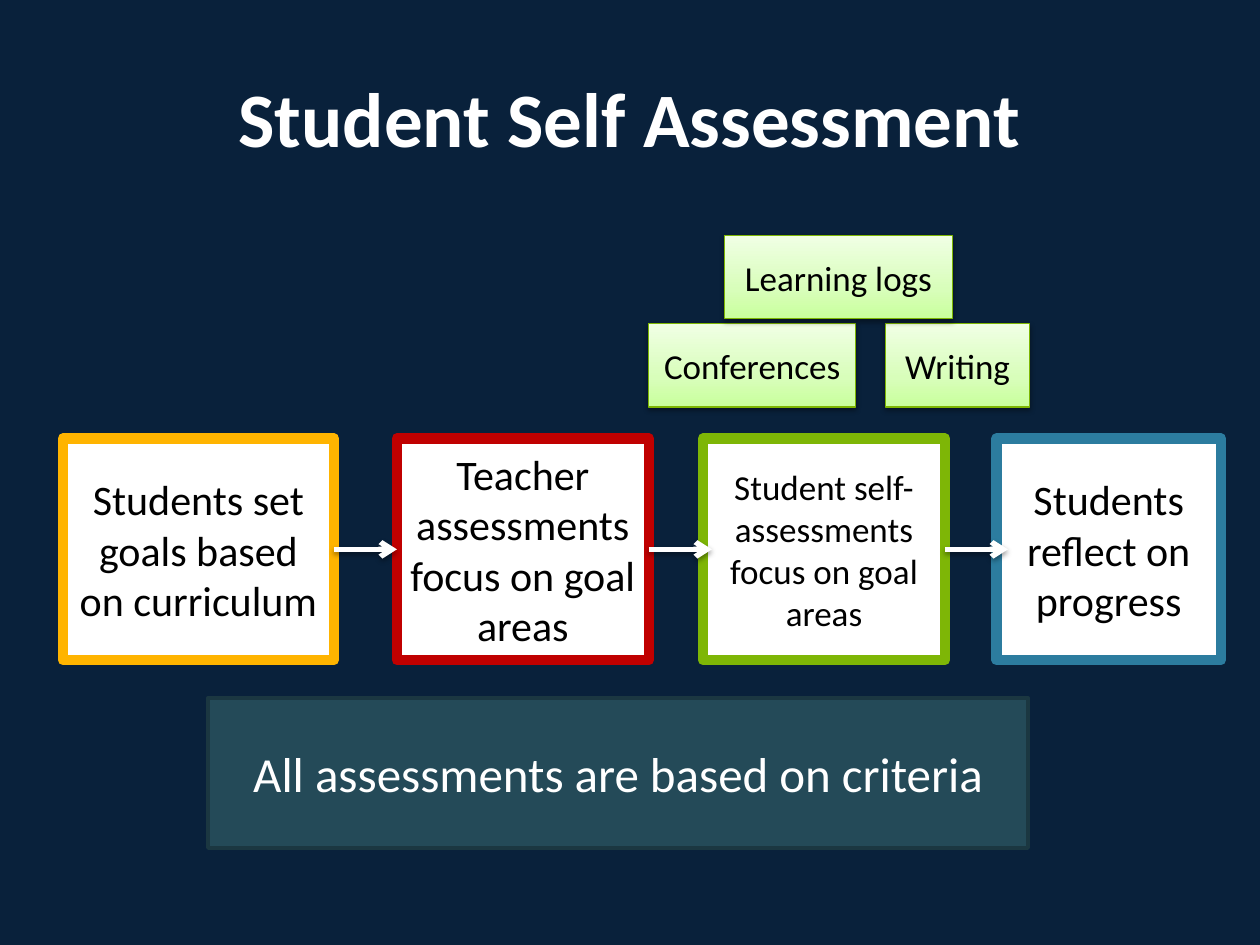
from dataclasses import dataclass

from pptx import Presentation
from pptx.dml.color import RGBColor
from pptx.enum.shapes import MSO_CONNECTOR, MSO_SHAPE
from pptx.enum.text import MSO_ANCHOR, PP_ALIGN
from pptx.oxml import parse_xml
from pptx.oxml.ns import nsdecls, qn
from pptx.util import Pt


@dataclass(frozen=True)
class Theme:
    """Colours, typeface and type sizes of the slide."""
    font: str = "Calibri"
    background: str = "09213B"
    light: str = "FFFFFF"
    dark: str = "000000"
    goals: str = "FFB400"
    teacher: str = "C00000"
    self_assessment: str = "7EB606"
    reflection: str = "2C7C9F"
    criteria: str = "244A58"
    criteria_edge: str = "1B3741"
    method_edge: str = "7DB602"
    method_stops: tuple = ((0, "C9FF9C"), (35, "D8FEBA"), (100, "F0FFE4"))
    title_size: int = 44
    criteria_size: int = 28
    step_size: int = 24
    small_size: int = 20


THEME = Theme()
BOTTOM_TO_TOP = 90
LEFT_SIDE, RIGHT_SIDE = 1, 3


def write_text(frame, wording, size, color, bold=False):
    """Put one centred paragraph into a text frame."""
    frame.text = wording
    frame_format = {"word_wrap": True, "vertical_anchor": MSO_ANCHOR.MIDDLE}
    for name, value in frame_format.items():
        setattr(frame, name, value)
    paragraph = frame.paragraphs[0]
    paragraph.alignment = PP_ALIGN.CENTER
    font = paragraph.runs[0].font
    font_format = {"name": THEME.font, "size": Pt(size), "bold": bold}
    for name, value in font_format.items():
        setattr(font, name, value)
    font.color.rgb = RGBColor.from_string(color)


def add_soft_shadow(properties):
    """Give shape properties a soft shadow falling straight down."""
    for effects in properties.findall(qn("a:effectLst")):
        properties.remove(effects)
    properties.append(parse_xml(
        f'<a:effectLst {nsdecls("a")}>'
        f'<a:outerShdw blurRad="{Pt(3.1)}" dist="{Pt(1.6)}" dir="5400000" rotWithShape="0">'
        f'<a:srgbClr val="{THEME.dark}"><a:alpha val="38000"/></a:srgbClr>'
        '</a:outerShdw></a:effectLst>'))


def set_line(line, color, width):
    """Set the colour and width of a line."""
    line.color.rgb = RGBColor.from_string(color)
    line.width = Pt(width)


def add_panel(slide, box, wording, size, color, fill, edge, edge_width):
    """Add a filled and outlined rectangle with centred text."""
    panel = slide.shapes.add_shape(MSO_SHAPE.RECTANGLE, *map(Pt, box))
    panel.shadow.inherit = False
    panel.fill.solid()
    panel.fill.fore_color.rgb = RGBColor.from_string(fill)
    set_line(panel.line, edge, edge_width)
    write_text(panel.text_frame, wording, size, color)
    return panel


def add_heading(slide, box, wording):
    """Place the heading in the title placeholder."""
    heading = slide.shapes.title
    for name, value in zip(("left", "top", "width", "height"), box):
        setattr(heading, name, Pt(value))
    write_text(heading.text_frame, wording, THEME.title_size, THEME.light, bold=True)


def add_arrow(slide, source, target):
    """Lead an arrow of fixed length out of one step to the next."""
    length = Pt(36)
    start = source.left + source.width
    middle = source.top + source.height // 2
    arrow = slide.shapes.add_connector(
        MSO_CONNECTOR.STRAIGHT, start, middle, start + length, middle)
    arrow.begin_connect(source, RIGHT_SIDE)
    if abs(start + length - target.left) < Pt(1):
        arrow.end_connect(target, LEFT_SIDE)
    set_line(arrow.line, THEME.light, 3)
    properties = arrow.element.spPr
    properties.find(qn("a:ln")).append(
        parse_xml(f'<a:tailEnd {nsdecls("a")} type="arrow"/>'))
    add_soft_shadow(properties)


def add_process(slide, box):
    """Place the four steps in a row, joined by arrows."""
    left, top, _, height = box
    steps = (
        (0, 154.8, "Students set goals based on curriculum", THEME.step_size, THEME.goals),
        (190.8, 144, "Teacher assessments focus on goal areas", THEME.step_size, THEME.teacher),
        (365.76, 138.24, "Student self-assessments focus on goal areas",
         THEME.small_size, THEME.self_assessment),
        (533.52, 128.16, "Students reflect on progress", THEME.step_size, THEME.reflection),
    )
    panels = [
        add_panel(slide, (left + offset, top, width, height), wording, size,
                  THEME.dark, THEME.light, edge, 6)
        for offset, width, wording, size, edge in steps
    ]
    for source, target in zip(panels, panels[1:]):
        add_arrow(slide, source, target)


def add_criteria(slide, box, wording):
    """Place the banner under the process."""
    add_panel(slide, box, wording, THEME.criteria_size, THEME.light,
              THEME.criteria, THEME.criteria_edge, 2)


def add_methods(slide, box):
    """Stack the self-assessment methods in two rows."""
    left, top, _, height = box
    row_gap = 2.88
    row_height = (height - row_gap) / 2
    methods = (
        (135.36, 1, 82.08, "Writing"),
        (0, 1, 118.08, "Conferences"),
        (43.2, 0, 130.32, "Learning logs"),
    )
    stops = "".join(
        f'<a:gs pos="{position * 1000}"><a:srgbClr val="{color}"/></a:gs>'
        for position, color in THEME.method_stops)
    for offset, row, width, wording in methods:
        place = (left + offset, top + row * (row_height + row_gap), width, row_height)
        method = add_panel(slide, place, wording, THEME.small_size, THEME.dark,
                           THEME.light, THEME.method_edge, 0.75)
        method.fill.gradient()
        method.fill.gradient_angle = BOTTOM_TO_TOP
        properties = method.element.spPr
        gradient = properties.find(qn("a:gradFill"))
        gradient.replace(gradient.find(qn("a:gsLst")),
                         parse_xml(f'<a:gsLst {nsdecls("a")}>{stops}</a:gsLst>'))
        add_soft_shadow(properties)


def main():
    """Build and save the slide."""
    deck = Presentation()
    deck.slide_width, deck.slide_height = Pt(720), Pt(540)
    slide = deck.slides.add_slide(deck.slide_layouts.get_by_name("Title Only"))
    slide.background.fill.solid()
    slide.background.fill.fore_color.rgb = RGBColor.from_string(THEME.background)
    add_heading(slide, (36, 21.6, 648, 90), "Student Self Assessment")
    add_process(slide, (36, 250.56, 661.68, 126.72))
    add_criteria(slide, (118.8, 398.88, 468.72, 85.68),
                 "All assessments are based on criteria")
    add_methods(slide, (370.8, 134.64, 217.44, 97.92))
    deck.save("out.pptx")


if __name__ == "__main__":
    main()
